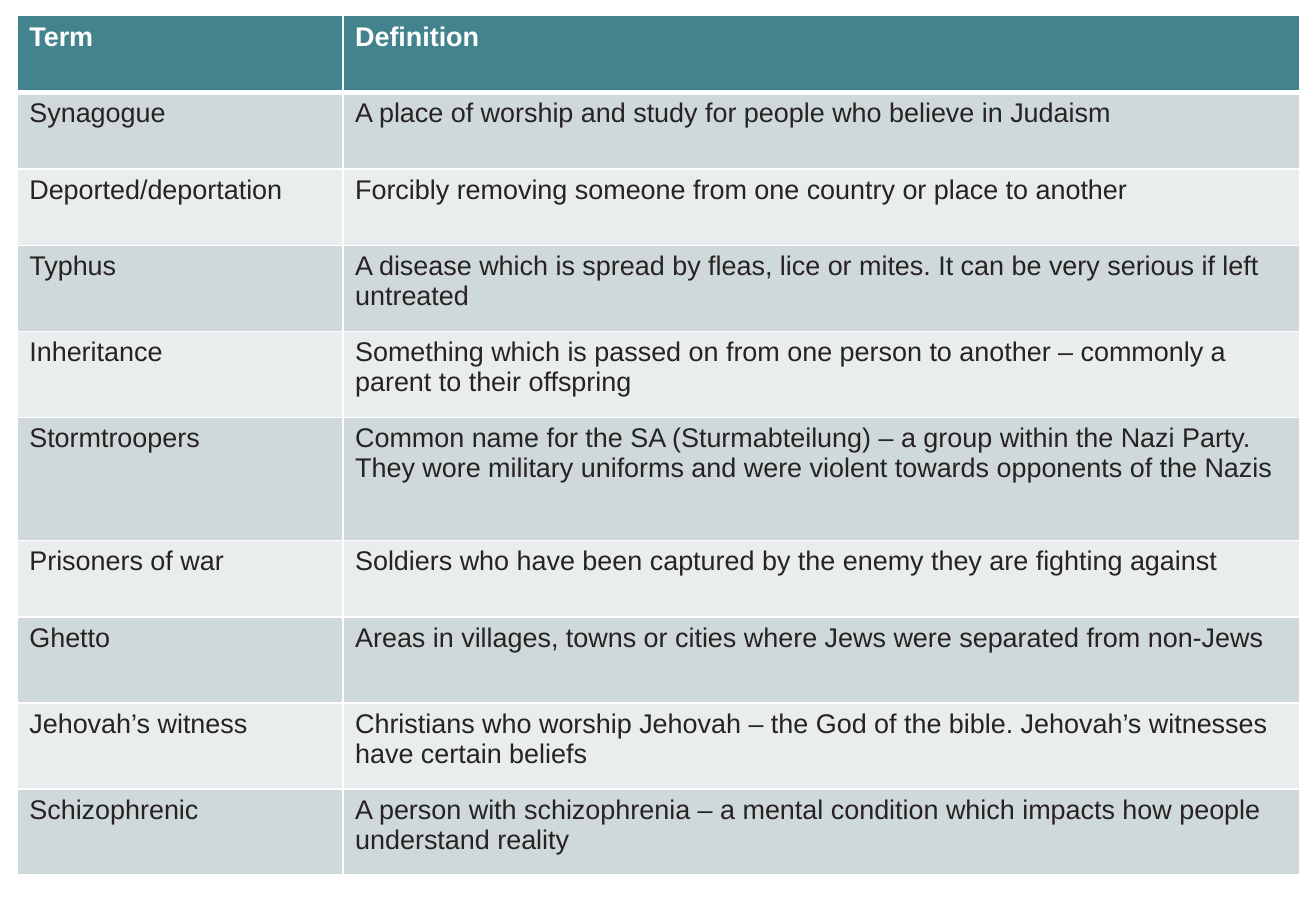
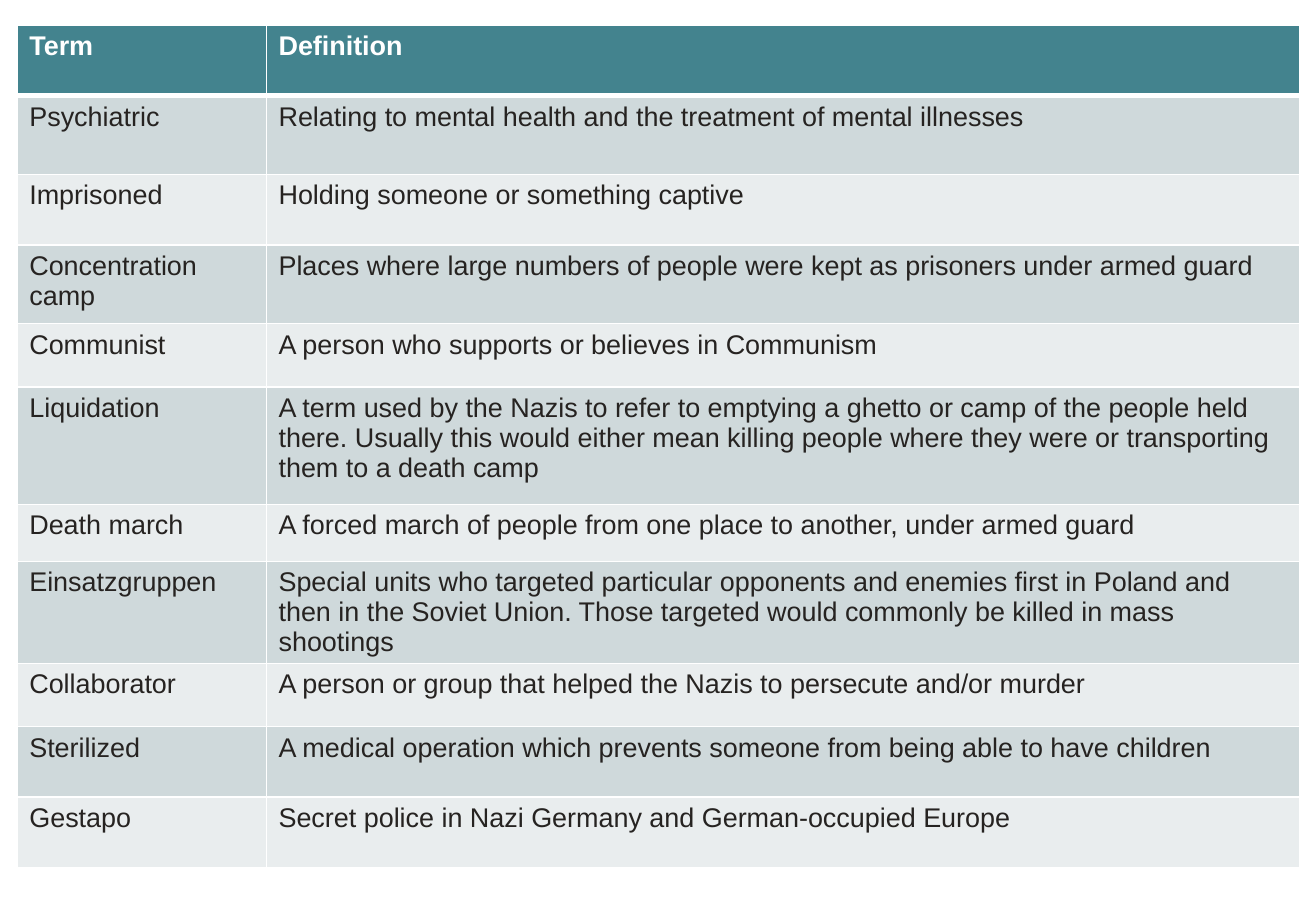
from lxml import etree
from pptx import Presentation
from pptx.dml.color import RGBColor
from pptx.oxml.ns import qn
from pptx.util import Cm, Pt

TERMS_1 = [
    ("Term", "Definition", 1.6),
    ("Synagogue", "A place of worship and study for people who believe in Judaism", 1.6),
    ("Deported/deportation", "Forcibly removing someone from one country or place to another", 1.6),
    ("Typhus", "A disease which is spread by fleas, lice or mites. It can be very serious "
     "if left untreated", 1.8),
    ("Inheritance", "Something which is passed on from one person to another – commonly a "
     "parent to their offspring", 1.8),
    ("Stormtroopers", "Common name for the SA (Sturmabteilung) – a group within the Nazi Party. "
     "They wore military uniforms and were violent towards opponents of the Nazis", 2.57),
    ("Prisoners of war", "Soldiers who have been captured by the enemy they are fighting against", 1.6),
    ("Ghetto", "Areas in villages, towns or cities where Jews were separated from non-Jews", 1.8),
    ("Jehovah’s witness", "Christians who worship Jehovah – the God of the bible. Jehovah’s "
     "witnesses have certain beliefs", 1.8),
    ("Schizophrenic", "A person with schizophrenia – a mental condition which impacts how people "
     "understand reality", 1.8),
]

TERMS_2 = [
    ("Term", "Definition", 1.47),
    ("Psychiatric", "Relating to mental health and the treatment of mental illnesses", 1.65),
    ("Imprisoned", "Holding someone or something captive", 1.47),
    ("Concentration camp", "Places where large numbers of people were kept as prisoners under "
     "armed guard", 1.65),
    ("Communist", "A person who supports or believes in Communism", 1.32),
    ("Liquidation", "A term used by the Nazis to refer to emptying a ghetto or camp of the people "
     "held there. Usually this would either mean killing people where they were or transporting "
     "them to a death camp", 2.46),
    ("Death march", "A forced march of people from one place to another, under armed guard", 1.19),
    ("Einsatzgruppen", "Special units who targeted particular opponents and enemies first in "
     "Poland and then in the Soviet Union. Those targeted would commonly be killed in mass "
     "shootings", 2.12),
    ("Collaborator", "A person or group that helped the Nazis to persecute and/or murder", 1.32),
    ("Sterilized", "A medical operation which prevents someone from being able to have children", 1.47),
    ("Gestapo", "Secret police in Nazi Germany and German-occupied Europe", 1.47),
]


def rgb(value):
    return RGBColor.from_string(value)


class Glossary:
    FONT, SIZE = "Arial", 16
    HEADER, BANDS = "43838E", ("E9EDEE", "CFD9DB")
    WHITE, INK = "FFFFFF", "262321"
    LEFT, WIDTH = 0.36, 26.8

    def __init__(self):
        self.prs = Presentation()
        self.prs.slide_width, self.prs.slide_height = Cm(27.51), Cm(19.05)

    def slide(self):
        self.s = self.prs.slides.add_slide(self.prs.slide_layouts[6])

    def borders(self, cell, widths):
        tcPr = cell._tc.get_or_add_tcPr()
        for side, width in zip("LRTB", widths):
            ln = etree.SubElement(tcPr, qn(f"a:ln{side}"), w=str(Pt(width)))
            fill = etree.SubElement(ln, qn("a:solidFill"))
            etree.SubElement(fill, qn("a:srgbClr"), val=self.WHITE)

    def cell(self, cell, text, row):
        header = row == 0
        self.borders(cell, (1, 1, 3 if row == 1 else 1, 3 if header else 1))
        cell.fill.solid()
        cell.fill.fore_color.rgb = rgb(self.HEADER if header else self.BANDS[row % 2])
        cell.text = text
        font = cell.text_frame.paragraphs[0].font
        font.name, font.size, font.bold = self.FONT, Pt(self.SIZE), header
        font.color.rgb = rgb(self.WHITE if header else self.INK)

    def table(self, terms, top, term_width):
        height = sum(row_height for _, _, row_height in terms)
        table = self.s.shapes.add_table(len(terms), 2, Cm(self.LEFT), Cm(top),
                                        Cm(self.WIDTH), Cm(height)).table
        table.columns[0].width = Cm(term_width)
        table.columns[1].width = Cm(self.WIDTH - term_width)
        for i, (term, definition, row_height) in enumerate(terms):
            table.rows[i].height = Cm(row_height)
            self.cell(table.cell(i, 0), term, i)
            self.cell(table.cell(i, 1), definition, i)


def main():
    glossary = Glossary()
    for terms, top, term_width in ((TERMS_1, 0.33, 6.81), (TERMS_2, 0.53, 5.21)):
        glossary.slide()
        glossary.table(terms, top, term_width)
    glossary.prs.save("out.pptx")


if __name__ == "__main__":
    main()
